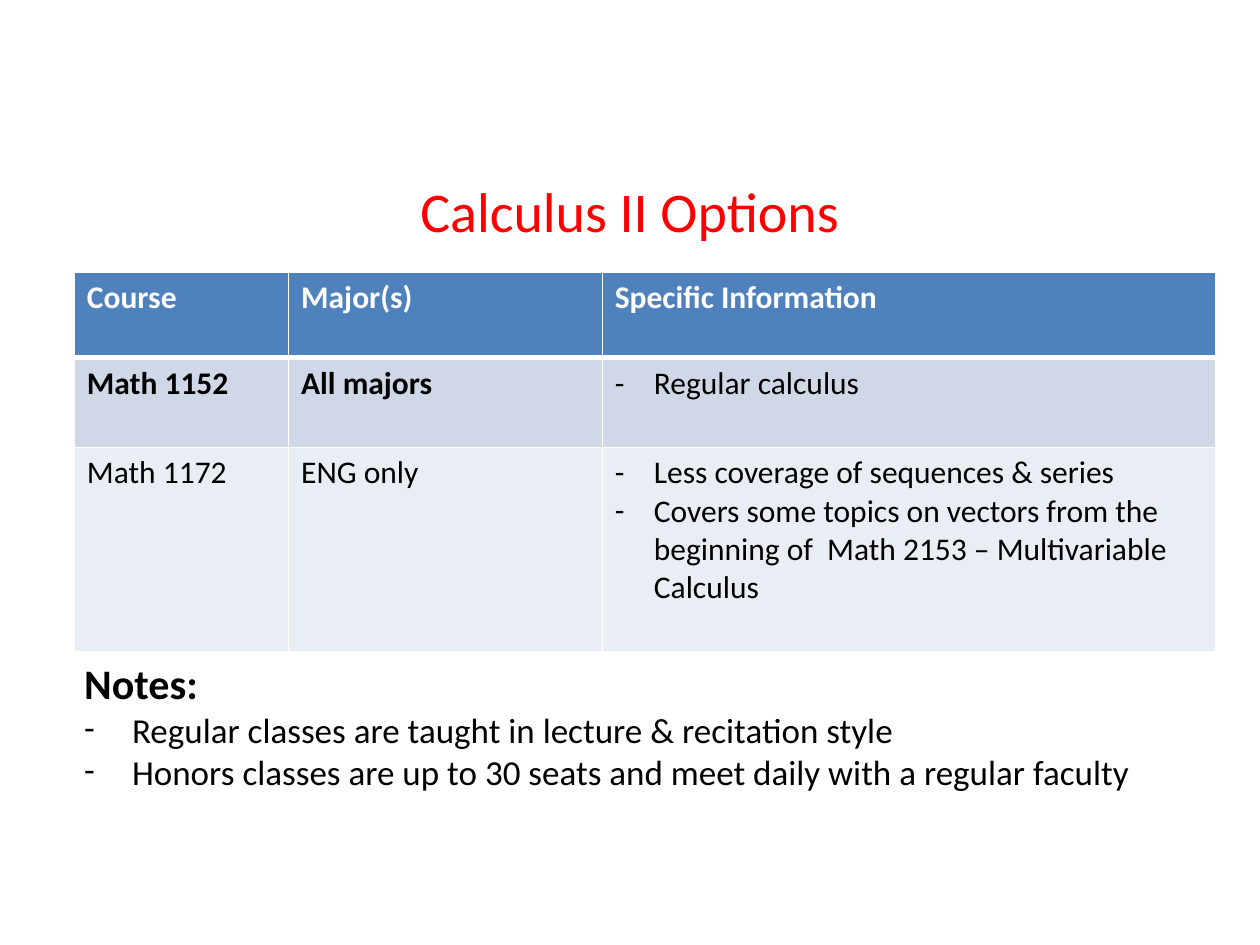
from lxml.etree import SubElement
from pptx import Presentation
from pptx.dml.color import RGBColor
from pptx.enum.text import MSO_ANCHOR, PP_ALIGN
from pptx.oxml.ns import qn
from pptx.util import Inches, Pt


def color(value):
    return RGBColor.from_string(value)


class SlideBuilder:
    font_name = "Calibri"
    border_color = "FFFFFF"

    def __init__(self, presentation):
        self.slide = presentation.slides.add_slide(presentation.slide_layouts[6])

    def add_bullet(self, paragraph, indent):
        properties = paragraph._p.get_or_add_pPr()
        properties.set("marL", str(Inches(indent)))
        properties.set("indent", str(-Inches(indent)))
        SubElement(properties, qn("a:buFont"), typeface=self.font_name)
        SubElement(properties, qn("a:buChar"), char="-")

    def fill_frame(self, frame, lines, align=PP_ALIGN.LEFT):
        for index, (text, size, bold, text_color, indent) in enumerate(lines):
            paragraph = frame.paragraphs[0] if index == 0 else frame.add_paragraph()
            paragraph.alignment = align
            if indent:
                self.add_bullet(paragraph, indent)
            run = paragraph.add_run()
            run.text = text
            font_format = {"name": self.font_name, "size": Pt(size), "bold": bold}
            for name, value in font_format.items():
                setattr(run.font, name, value)
            run.font.color.rgb = color(text_color)

    def add_text(self, box, lines, align=PP_ALIGN.LEFT, anchor=MSO_ANCHOR.TOP):
        shape = self.slide.shapes.add_textbox(*map(Inches, box))
        frame_format = {"word_wrap": True, "vertical_anchor": anchor}
        for name, value in frame_format.items():
            setattr(shape.text_frame, name, value)
        self.fill_frame(shape.text_frame, lines, align)

    def add_borders(self, cell, bottom_width):
        properties = cell._tc.get_or_add_tcPr()
        widths = {"a:lnL": 1, "a:lnR": 1, "a:lnT": 1, "a:lnB": bottom_width}
        for tag, width in widths.items():
            line = SubElement(properties, qn(tag), w=str(Pt(width)))
            fill = SubElement(line, qn("a:solidFill"))
            SubElement(fill, qn("a:srgbClr"), val=self.border_color)

    def add_table(self, left, top, widths, heights, rows, fills):
        table = self.slide.shapes.add_table(
            len(rows), len(widths), Inches(left), Inches(top),
            Inches(sum(widths)), Inches(sum(heights)),
        ).table
        for column, width in zip(table.columns, widths):
            column.width = Inches(width)
        for index, (row, cells) in enumerate(zip(table.rows, rows)):
            row.height = Inches(heights[index])
            for cell, lines in zip(row.cells, cells):
                self.add_borders(cell, 3 if index == 0 else 1)
                cell.fill.solid()
                cell.fill.fore_color.rgb = color(fills[index])
                self.fill_frame(cell.text_frame, lines)


def header(text):
    return [(text, 18, True, "FFFFFF", 0)]


def entry(text, bold=False):
    return [(text, 18, bold, "000000", 0)]


def details(*texts):
    return [(text, 18, False, "000000", 0.31) for text in texts]


def main():
    presentation = Presentation()
    presentation.slide_width = Inches(10)
    presentation.slide_height = Inches(7.5)
    builder = SlideBuilder(presentation)
    builder.add_text(
        (0.5, 1.42, 9, 0.5),
        [("Calculus II Options", 32, False, "FF0000", 0)],
        PP_ALIGN.CENTER,
        MSO_ANCHOR.MIDDLE,
    )
    courses = [
        [header("Course"), header("Major(s)"), header("Specific Information")],
        [entry("Math 1152", True), entry("All majors", True), details("Regular calculus")],
        [
            entry("Math 1172"),
            entry("ENG only"),
            details(
                "Less coverage of sequences & series",
                "Covers some topics on vectors from the beginning of  "
                "Math 2153 – Multivariable Calculus",
            ),
        ],
    ]
    builder.add_table(
        0.59, 2.16, [1.7, 2.49, 4.87], [0.68, 0.71, 1.62],
        courses, ["4F81BD", "D0D8E8", "E9EDF4"],
    )
    notes = [
        "Regular classes are taught in lecture & recitation style",
        "Honors classes are up to 30 seats and meet daily with a regular faculty",
    ]
    builder.add_text(
        (0.57, 5.17, 9.07, 1.82),
        [("Notes:", 24, True, "000000", 0)]
        + [(note, 20, False, "000000", 0.38) for note in notes],
    )
    presentation.save("out.pptx")


if __name__ == "__main__":
    main()
